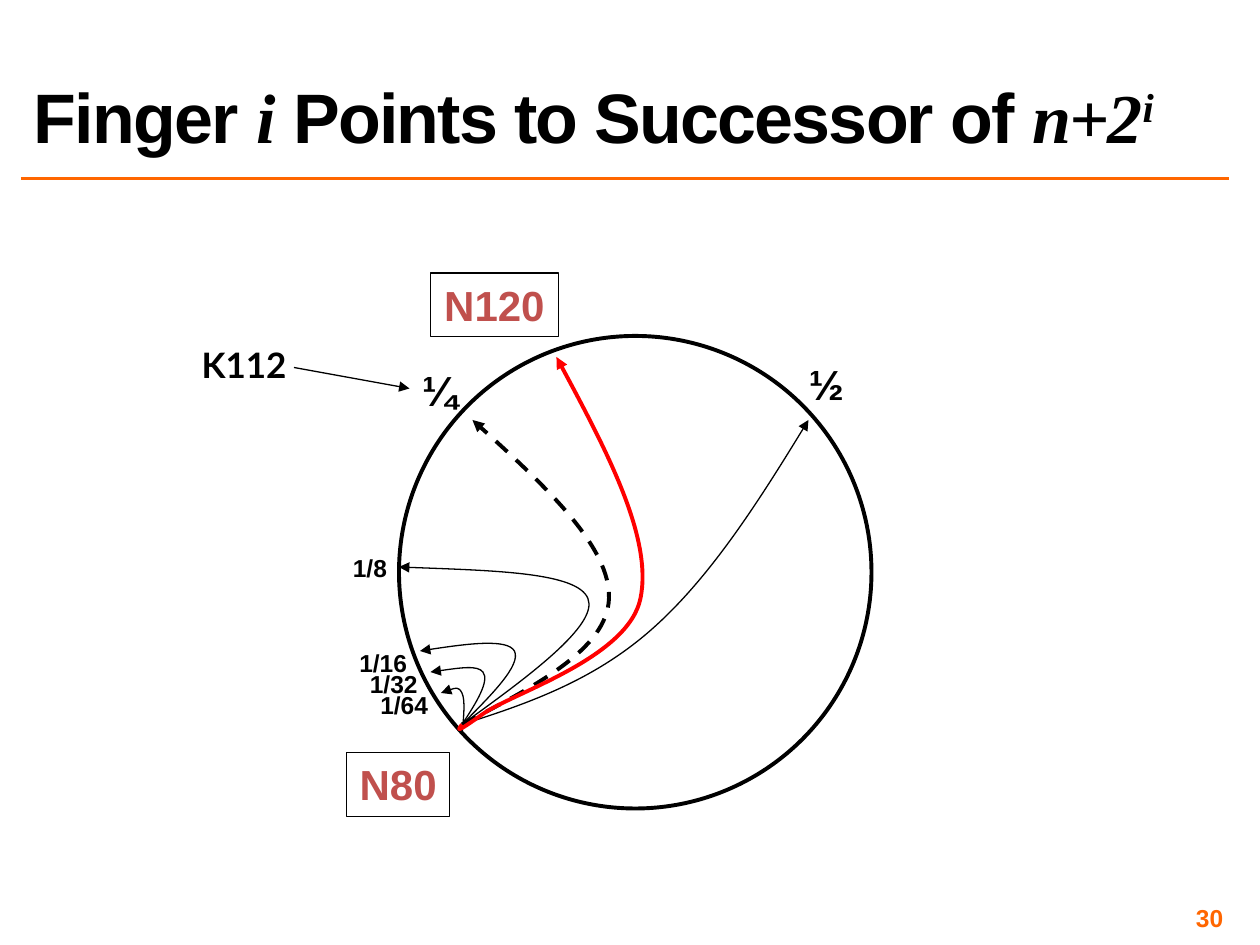
"""Build the slide on finger table pointers around an identifier circle."""
from dataclasses import dataclass

import pptx
import pptx.dml.color
import pptx.enum.dml
import pptx.enum.shapes
import pptx.enum.text
import pptx.oxml
import pptx.oxml.ns
import pptx.util
from pptx.enum.text import MSO_ANCHOR, PP_ALIGN
from pptx.util import Pt


@dataclass(frozen=True)
class Theme:
    """Colours, fonts and sizes used on the slide."""
    black: str = "000000"
    orange: str = "FF6600"
    red: str = "FF0000"
    node: str = "C0504D"
    sans: str = "Arial"
    serif: str = "Times New Roman"
    key_font: str = "Lato"
    title_size: float = 40
    label_size: float = 24
    key_size: float = 20
    small_size: float = 14
    thin: float = 0.75
    rule: float = 2
    thick: float = 2.25


THEME = Theme()


@dataclass(frozen=True)
class Label:
    """A one-line text with its box in points."""
    text: str
    left: float
    top: float
    width: float
    height: float
    size: float = THEME.label_size
    color: str = THEME.black
    font: str = THEME.sans
    framed: bool = False


@dataclass(frozen=True)
class Finger:
    """A Bézier arrow: start point, then three points per segment."""
    points: tuple[tuple[float, float], ...]
    color: str = THEME.black
    weight: float = THEME.thin
    dashed: bool = False


@dataclass(frozen=True)
class TitleRun:
    """A piece of the title."""
    text: str
    variable: bool = False
    superscript: bool = False


TITLE = (
    TitleRun("Finger "),
    TitleRun("i", variable=True),
    TitleRun(" Points to Successor of "),
    TitleRun("n+2", variable=True),
    TitleRun("i", variable=True, superscript=True),
)

LABELS = (
    Label("N80", 198, 430, 59, 36.5, color=THEME.node, framed=True),
    Label("N120", 246, 156, 73, 36.5, color=THEME.node, framed=True),
    Label("½", 455, 201.6, 34.5, 36),
    Label("¼", 234, 204.5, 34.5, 36),
    Label("1/8", 194.4, 312.5, 34, 24, THEME.small_size),
    Label("1/16", 198, 366.5, 42, 24, THEME.small_size),
    Label("1/32", 204, 378.5, 42, 24, THEME.small_size),
    Label("1/64", 210, 390.5, 42, 24, THEME.small_size),
    Label("K112", 106, 192.5, 67, 31.5, THEME.key_size, font=THEME.key_font),
)

NODE = (264, 414)
FINGERS = (
    Finger(((264, 420), (265, 410), (266, 400), (264, 396),
            (262, 392), (257, 394), (252, 396))),
    Finger((NODE, (271.5, 401.5), (279.5, 389), (276, 384),
            (273, 379.5), (259.5, 381.5), (246, 384))),
    Finger((NODE, (281, 397), (298, 379.5), (294, 372),
            (290, 365), (265, 368.5), (240, 372))),
    Finger((NODE, (303, 386), (342, 357), (336, 342),
            (330, 327), (279, 325.5), (228, 324))),
    Finger((NODE, (301.5, 402), (339, 389), (372, 360),
            (405, 331), (433.5, 285.5), (462, 240))),
    Finger((NODE, (305.5, 392.5), (347, 371), (348, 342),
            (349, 313), (309.5, 276.5), (270, 240)),
           weight=THEME.thick, dashed=True),
    Finger((NODE, (261.5, 417), (259, 420), (276, 408),
            (293, 396), (359, 376), (366, 342),
            (373, 308), (345.5, 256), (318, 204)),
           color=THEME.red, weight=THEME.thick),
)


def rgb(color: str) -> pptx.dml.color.RGBColor:
    """Return a colour object for a hexadecimal value."""
    return pptx.dml.color.RGBColor.from_string(color)


def style_line(shape, color: str, weight: float, arrow: bool = False) -> None:
    """Set colour, width and optional arrowhead of an outline."""
    shape.line.color.rgb = rgb(color)
    shape.line.width = Pt(weight)
    if arrow:
        properties = shape.line._get_or_add_ln()
        pptx.oxml.ns.qn("a:tailEnd")
        tail = properties.makeelement(pptx.oxml.ns.qn("a:tailEnd"), {"type": "triangle"})
        properties.append(tail)


def style_font(font, size: float, color: str) -> None:
    """Set a bold font in a size and colour."""
    font.size = Pt(size)
    font.bold = True
    font.color.rgb = rgb(color)


def add_straight(slide, start, end, color: str, weight: float, arrow: bool = False) -> None:
    """Draw a straight line between two points."""
    connector = slide.shapes.add_connector(
        pptx.enum.shapes.MSO_CONNECTOR.STRAIGHT, *map(Pt, start + end))
    properties = connector._element.spPr
    style_line(connector, color, weight, arrow)
    properties.append(properties.makeelement(pptx.oxml.ns.qn("a:effectLst"), {}))


def add_title(slide) -> None:
    """Place and fill the title placeholder."""
    title = slide.shapes.title
    title.left, title.top, title.width, title.height = map(Pt, (12, 19.5, 679, 74))
    title.text_frame.vertical_anchor = MSO_ANCHOR.BOTTOM
    paragraph = title.text_frame.paragraphs[0]
    paragraph.alignment = PP_ALIGN.LEFT
    paragraph.line_spacing = 0.8
    style_font(paragraph.font, THEME.title_size, THEME.black)
    for piece in TITLE:
        run = paragraph.add_run()
        run.text = piece.text
        run.font.name = THEME.serif if piece.variable else THEME.sans
        run.font.italic = piece.variable
        properties = run._r.get_or_add_rPr()
        properties.set("spc", "-100")
        if piece.superscript:
            properties.set("baseline", "30000")


def add_label(slide, label: Label) -> None:
    """Draw a centred label, framed for a node."""
    box = slide.shapes.add_textbox(
        *map(Pt, (label.left, label.top, label.width, label.height)))
    if label.framed:
        style_line(box, THEME.black, THEME.thin)
    frame = box.text_frame
    frame.word_wrap = False
    frame.auto_size = pptx.enum.text.MSO_AUTO_SIZE.SHAPE_TO_FIT_TEXT
    paragraph = frame.paragraphs[0]
    paragraph.text = label.text
    paragraph.alignment = PP_ALIGN.CENTER
    paragraph.font.name = label.font
    style_font(paragraph.font, label.size, label.color)


def add_finger(slide, finger: Finger) -> None:
    """Draw a finger as a freeform made of cubic curves."""
    start, *rest = finger.points
    builder = slide.shapes.build_freeform(*start, scale=float(Pt(1)))
    builder.add_line_segments(rest, close=False)
    shape = builder.convert_to_shape()
    shape.shadow.inherit = False
    shape.fill.background()
    style_line(shape, finger.color, finger.weight, arrow=True)
    if finger.dashed:
        shape.line.dash_style = pptx.enum.dml.MSO_LINE.DASH
    segments = list(shape._element.iter(pptx.oxml.ns.qn("a:lnTo")))
    outline = segments[0].getparent()
    for first in range(0, len(segments), 3):
        curve = outline.makeelement(pptx.oxml.ns.qn("a:cubicBezTo"), {})
        outline.append(curve)
        for segment in segments[first:first + 3]:
            curve.append(segment[0])
            outline.remove(segment)


def add_circle(slide) -> None:
    """Draw the identifier circle."""
    circle = slide.shapes.add_shape(
        pptx.enum.shapes.MSO_SHAPE.OVAL, *map(Pt, (228, 192, 270, 270)))
    circle.shadow.inherit = False
    circle.fill.background()
    style_line(circle, THEME.black, THEME.thick)


def add_slide_number(slide) -> None:
    """Write the slide number at the lower right."""
    box = slide.shapes.add_textbox(*map(Pt, (534, 516, 168, 16.5)))
    frame = box.text_frame
    frame.word_wrap = True
    frame.vertical_anchor = MSO_ANCHOR.MIDDLE
    frame.margin_left = frame.margin_right = frame.margin_top = frame.margin_bottom = Pt(3)
    paragraph = frame.paragraphs[0]
    paragraph.text = "30"
    paragraph.alignment = PP_ALIGN.RIGHT
    paragraph.font.name = THEME.sans
    style_font(paragraph.font, THEME.small_size, THEME.orange)


def main() -> None:
    """Build and save the presentation."""
    presentation = pptx.Presentation()
    presentation.slide_width, presentation.slide_height = Pt(720), Pt(540)
    slide = presentation.slides.add_slide(presentation.slide_layouts[5])
    add_straight(slide, (12, 102), (702, 102), THEME.orange, THEME.rule)
    add_slide_number(slide)
    add_title(slide)
    add_circle(slide)
    for label in LABELS:
        add_label(slide, label)
    for finger in FINGERS:
        add_finger(slide, finger)
    add_straight(slide, (168, 210), (234, 222), THEME.black, THEME.thin, arrow=True)
    presentation.save("out.pptx")


if __name__ == "__main__":
    main()
